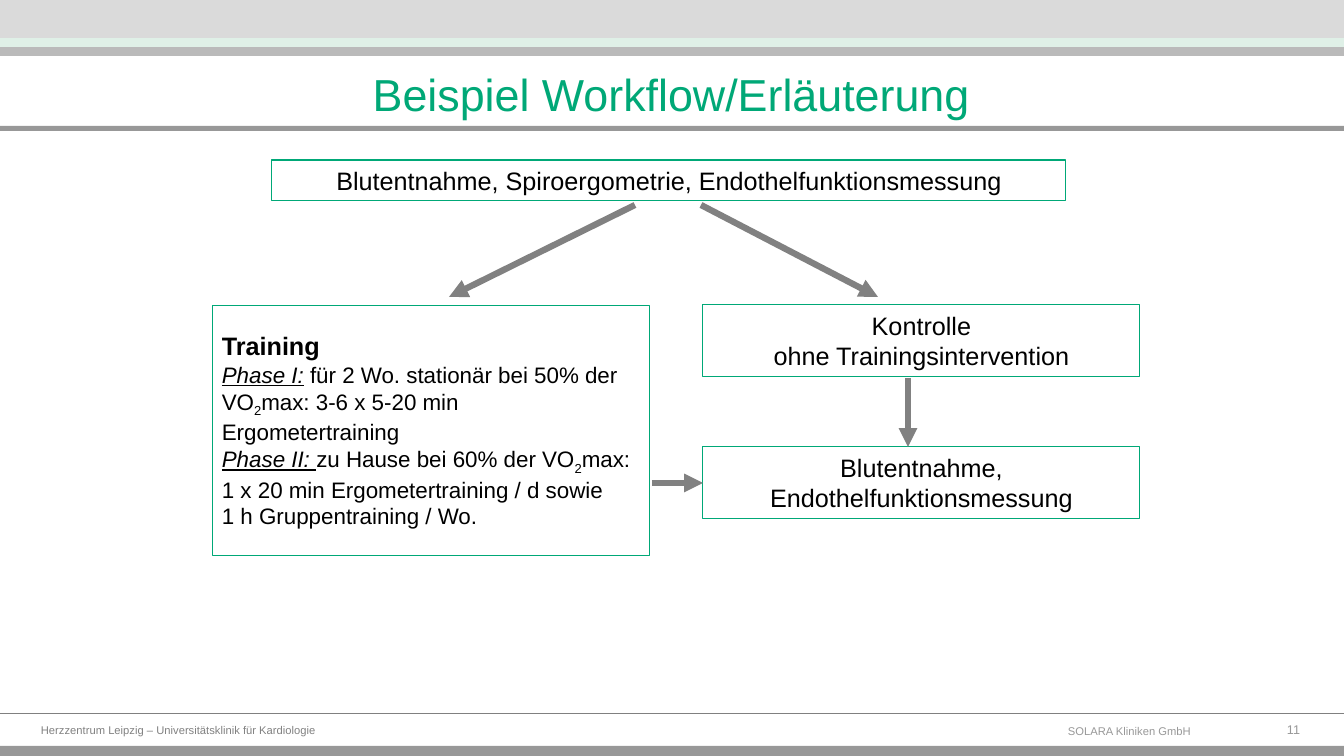
from lxml import etree
from pptx import Presentation
from pptx.dml.color import RGBColor
from pptx.enum.shapes import MSO_CONNECTOR, MSO_SHAPE
from pptx.enum.text import MSO_ANCHOR, PP_ALIGN
from pptx.oxml.ns import qn
from pptx.util import Pt

RECT, STRAIGHT = MSO_SHAPE.RECTANGLE, MSO_CONNECTOR.STRAIGHT
LEFT, CENTER, RIGHT = PP_ALIGN.LEFT, PP_ALIGN.CENTER, PP_ALIGN.RIGHT
TOP, MIDDLE, BOTTOM = MSO_ANCHOR.TOP, MSO_ANCHOR.MIDDLE, MSO_ANCHOR.BOTTOM
LEFT_SIDE = 1

# Content: lengths in px, 1344 x 756
WIDTH, HEIGHT = 1344, 756
GREEN, GREY, ARROW_GREY, BLACK = "00A877", "989898", "818181", "000000"

TITLE = "Beispiel Workflow/Erläuterung"
BANDS = [  # top, height, colour
    (47, 9, "BABABA"),
    (38, 9, "DFF0E7"),
    (0, 38, "DADADA"),
    (746, 10, GREY),
    (126, 5, GREY),
]
FOOTERS = [  # text, box, format
    ("11", (1243, 717, 67, 25), dict(size=9, color=GREY, align=RIGHT, anchor=MIDDLE)),
    ("SOLARA Kliniken GmbH", (1058, 719, 196, 26), dict(size=8, color=GREY)),
    ("Herzzentrum Leipzig – Universitätsklinik für Kardiologie",
     (31, 717, 519, 25), dict(size=8, color=ARROW_GREY, anchor=BOTTOM)),
]

PHASE = dict(italic=True, underline=True)
SUB = dict(baseline=-25000)
TRAINING = [
    [("Training", dict(size=18, bold=True))],
    [("Phase I:", PHASE), (" für 2 Wo. stationär bei 50% der VO", {}), ("2", SUB),
     ("max: 3-6 x 5-20 min Ergometertraining", {})],
    [("Phase II: ", PHASE), ("zu Hause bei 60% der VO", {}), ("2", SUB), ("max:", {})],
    "1 x 20 min Ergometertraining / d sowie",
    "1 h Gruppentraining / Wo.",
]
STEP_FORMAT = dict(size=18, align=CENTER)
STEPS = {  # box, border in pt, paragraphs, format
    "baseline tests": ((272, 160, 794, 41), 0.75,
                       ["Blutentnahme, Spiroergometrie, Endothelfunktionsmessung"],
                       STEP_FORMAT),
    "control": ((703, 305, 437, 72), 0.75,
                ["Kontrolle", "ohne Trainingsintervention"], STEP_FORMAT),
    "final tests": ((703, 447, 437, 72), 0.75,
                    ["Blutentnahme,", "Endothelfunktionsmessung"], STEP_FORMAT),
    "training": ((212, 305, 437, 250), 0.5, TRAINING, dict(size=16, anchor=MIDDLE)),
}
ARROWS = [  # start, end, step joined at its left side
    ((635, 205), (449, 297), None),
    ((701, 205), (878, 297), None),
    ((908, 378), (908, 447), None),
    ((652, 483), (703, 483), "final tests"),
]

prs = Presentation()
SCALE = 914400 / 100.8


def px(*lengths):
    return [round(length * SCALE) for length in lengths]


def rgb(value):
    return RGBColor.from_string(value)


def write(shape, paragraphs, size=18, color=BLACK, align=LEFT, anchor=TOP):
    """Fill a shape; each paragraph is a string or a list of (text, format) runs."""
    frame = shape.text_frame
    frame.word_wrap = True
    frame.vertical_anchor = anchor
    for index, runs in enumerate(paragraphs):
        paragraph = frame.add_paragraph() if index else frame.paragraphs[0]
        paragraph.alignment = align
        for text, style in [(runs, {})] if isinstance(runs, str) else runs:
            run = paragraph.add_run()
            run.text = text
            font = run.font
            font.name = "Arial"
            font.size = Pt(style.get("size", size))
            font.color.rgb = rgb(color)
            font.bold = style.get("bold", False)
            font.italic = style.get("italic", False)
            font.underline = style.get("underline", False)
            if "baseline" in style:
                run._r.get_or_add_rPr().set("baseline", str(style["baseline"]))


def add_rectangle(box, fill=None, border=None):
    rectangle = slide.shapes.add_shape(RECT, *px(*box))
    rectangle.shadow.inherit = False
    if fill:
        rectangle.fill.solid()
        rectangle.fill.fore_color.rgb = rgb(fill)
    else:
        rectangle.fill.background()
    if border:
        rectangle.line.color.rgb = rgb(GREEN)
        rectangle.line.width = Pt(border)
    else:
        rectangle.line.fill.background()
    return rectangle


def add_line(start, end, color, width, arrow=False):
    line = slide.shapes.add_connector(STRAIGHT, *px(*start, *end))
    line.line.color.rgb = rgb(color)
    line.line.width = Pt(width)
    if arrow:
        etree.SubElement(line.line._get_or_add_ln(), qn("a:tailEnd"), type="triangle")
    etree.SubElement(line._element.spPr, qn("a:effectLst"))
    return line


prs.slide_width, prs.slide_height = px(WIDTH, HEIGHT)
slide = prs.slides.add_slide(prs.slide_layouts[5])

# Frame bands and footer
for top, height, color in BANDS:
    add_rectangle((0, top, WIDTH, height), fill=color)
add_line((0, 714), (WIDTH, 714), "808080", 0.75)
for text, box, style in FOOTERS:
    write(slide.shapes.add_textbox(*px(*box)), [text], **style)

# Title
title = slide.shapes.title
title.left, title.top, title.width, title.height = px(47, 26, 1249, 100)
write(title, [TITLE], size=32, color=GREEN, align=CENTER, anchor=BOTTOM)
# Keep the title above the bands
slide.shapes._spTree.append(title._element)

# Workflow steps
step_boxes = {}
for step, (box, border, paragraphs, style) in STEPS.items():
    step_boxes[step] = add_rectangle(box, border=border)
    write(step_boxes[step], paragraphs, **style)

# Arrows between steps
for start, end, joined_step in ARROWS:
    arrow = add_line(start, end, ARROW_GREY, 4.5, arrow=True)
    if joined_step:
        arrow.end_connect(step_boxes[joined_step], LEFT_SIDE)

prs.save("out.pptx")
